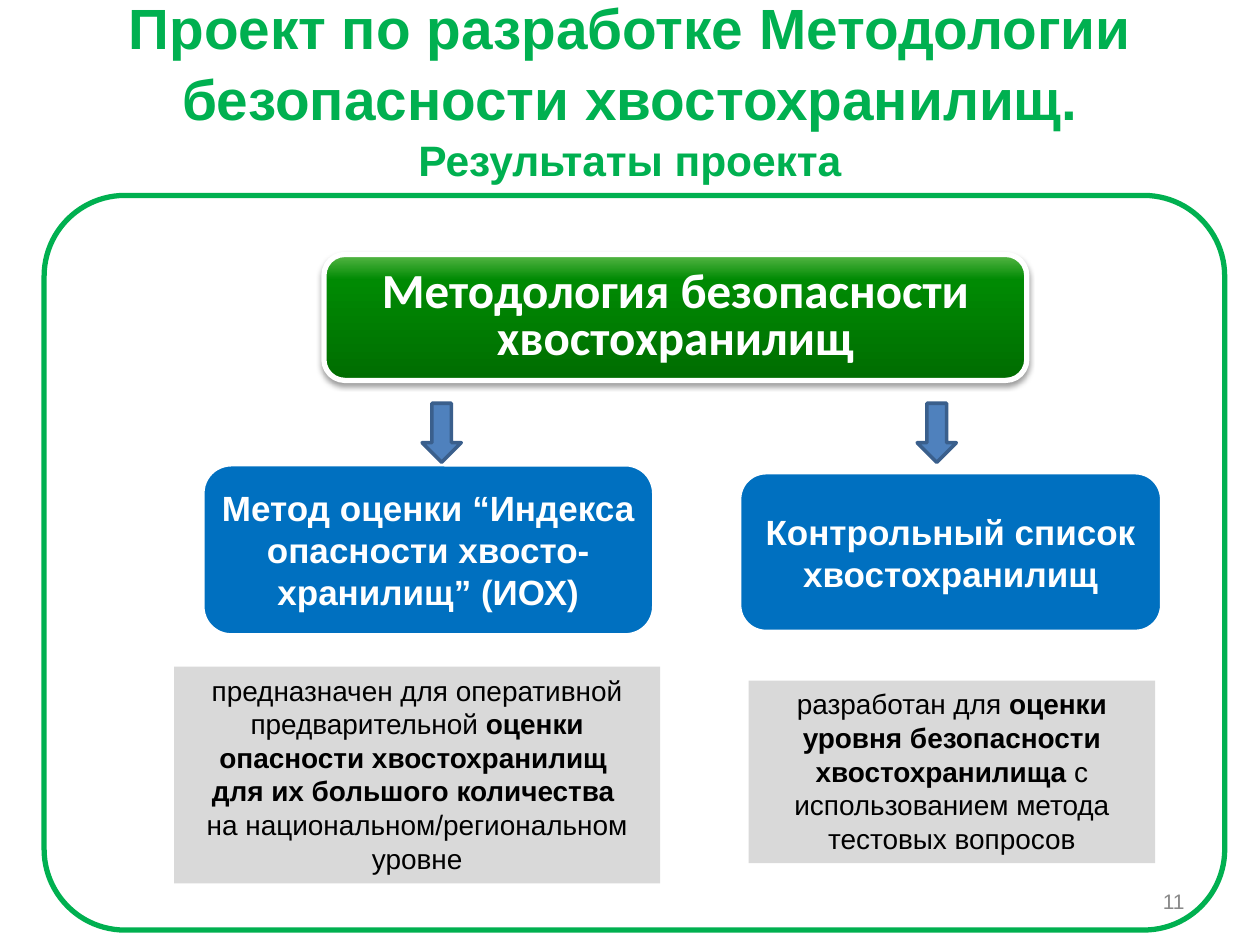
import copy

import pptx
import pptx.dml.color
import pptx.enum.shapes
import pptx.enum.text
import pptx.oxml
import pptx.oxml.ns
import pptx.util

Cm, Pt = pptx.util.Cm, pptx.util.Pt
SHAPE = pptx.enum.shapes.MSO_SHAPE
ALIGN = pptx.enum.text.PP_ALIGN
ANCHOR = pptx.enum.text.MSO_ANCHOR

GREEN, BLUE, GREY, WHITE = "00B050", "0070C0", "D9D9D9", "FFFFFF"
BANNER_STOPS = [(0, "58B747"), (0.2, "008A03"), (1, "006D01")]

# Positions are left, top, width, height in centimetres.
# Spans are (text, format) pairs; "\n" is a line break.
FRAME = (0.89, 3.94, 23.8, 14.81)
TITLE_AT = (1.27, 0.76, 22.86, 2.01)
TITLE = [
    ("Проект по разработке Методологии безопасности хвостохранилищ. ", {"size": 32.4}),
    ("Результаты проекта", {"size": 24.3}),
]
BANNER_AT = (6.53, 5.13, 14.17, 2.54)
BANNER = "Методология безопасности хвостохранилищ"
NUMBER_AT = (18.21, 17.65, 5.92, 1.02)

BRANCHES = [
    {
        "arrow_left": 8.51,
        "heading_at": (4.09, 9.37, 9.09, 3.43),
        "heading": "Метод оценки “Индекса опасности хвосто-хранилищ” (ИОХ)",
        "note_at": (3.51, 13.44, 9.8, 4.37),
        "note": [
            ("предназначен для оперативной предварительной ", {}),
            ("оценки опасности хвостохранилищ \nдля их большого количества \n", {"bold": True}),
            ("на национальном/региональном уровне", {}),
        ],
    },
    {
        "arrow_left": 18.49,
        "heading_at": (14.91, 9.53, 8.51, 3.2),
        "heading": "Контрольный список хвостохранилищ",
        "note_at": (15.09, 13.72, 8.2, 3.68),
        "note": [
            ("разработан для ", {}),
            ("оценки\nуровня безопасности хвостохранилища ", {"bold": True}),
            ("с использованием метода тестовых вопросов", {}),
        ],
    },
]


def rgb(value):
    return pptx.dml.color.RGBColor.from_string(value)


def add_box(page, kind, at, fill=None, line=None, width=2):
    box = page.shapes.add_shape(kind, *map(Cm, at))
    box.shadow.inherit = False
    if fill:
        box.fill.solid()
        box.fill.fore_color.rgb = rgb(fill)
    else:
        box.fill.background()
    if line:
        box.line.color.rgb = rgb(line)
        box.line.width = Pt(width)
    else:
        box.line.fill.background()
    return box


def write(box, text, size=16, color="000000", font="Arial", bold=False, align=ALIGN.CENTER,
          anchor=ANCHOR.MIDDLE, spacing=None, inset=(0.25, 0.13)):
    """Fill the box with one paragraph, given as a string or a list of spans."""
    frame = box.text_frame
    frame.word_wrap = True
    frame.vertical_anchor = anchor
    frame.margin_left = frame.margin_right = Cm(inset[0])
    frame.margin_top = frame.margin_bottom = Cm(inset[1])
    para = frame.paragraphs[0]
    para.alignment = align
    if spacing:
        para.line_spacing = spacing
    for words, style in [(text, {})] if isinstance(text, str) else text:
        for index, piece in enumerate(words.split("\n")):
            if index:
                para.add_line_break()
            if piece:
                span = para.add_run()
                span.text = piece
                span.font.name = font
                span.font.size = Pt(style.get("size", size))
                span.font.bold = style.get("bold", bold)
                span.font.color.rgb = rgb(color)


def add_text(page, at, text, **style):
    write(page.shapes.add_textbox(*map(Cm, at)), text, **style)


def shade(box, stops):
    """Give the box a top-to-bottom gradient."""
    box.fill.gradient()
    box.fill.gradient_angle = 270
    elements = box.fill._fill._gradFill.find(pptx.oxml.ns.qn("a:gsLst"))
    while len(elements) < len(stops):
        elements.append(copy.deepcopy(elements[-1]))
    for stop, (position, color) in zip(box.fill.gradient_stops, stops):
        stop.position = position
        stop.color.rgb = rgb(color)


def drop_shadow(box):
    effects = box._element.spPr.find(pptx.oxml.ns.qn("a:effectLst"))
    effects.append(pptx.oxml.parse_xml(
        f'<a:outerShdw {pptx.oxml.ns.nsdecls("a")} blurRad="40000" dist="20000" '
        'dir="5400000" rotWithShape="0"><a:srgbClr val="000000">'
        '<a:alpha val="38000"/></a:srgbClr></a:outerShdw>'))


def main():
    deck = pptx.Presentation()
    deck.slide_width, deck.slide_height = Cm(25.4), Cm(19.05)
    page = deck.slides.add_slide(deck.slide_layouts[6])

    frame = add_box(page, SHAPE.ROUNDED_RECTANGLE, FRAME, line=GREEN, width=3)
    frame.adjustments[0] = 0.11
    add_text(page, TITLE_AT, TITLE, color=GREEN, bold=True, spacing=1.04)
    # Spans of the title carry only their size, so both stay bold.

    banner = add_box(page, SHAPE.ROUNDED_RECTANGLE, BANNER_AT, line=WHITE, width=3)
    shade(banner, BANNER_STOPS)
    drop_shadow(banner)
    write(banner, BANNER, size=28, color=WHITE, font="Calibri", bold=True,
          spacing=0.8, inset=(0.3, 0.15))

    for branch in BRANCHES:
        heading = add_box(page, SHAPE.ROUNDED_RECTANGLE, branch["heading_at"], BLUE, WHITE)
        write(heading, branch["heading"], size=20, color=WHITE, bold=True, inset=(0.2, 0.1))
        note = add_box(page, SHAPE.RECTANGLE, branch["note_at"], GREY)
        write(note, branch["note"], anchor=ANCHOR.TOP)
        add_box(page, SHAPE.DOWN_ARROW, (branch["arrow_left"], 8.13, 0.79, 1.19),
                "4F81BD", "3A5F8C")

    add_text(page, NUMBER_AT, "11", size=12, color="898989", align=ALIGN.RIGHT)
    deck.save("out.pptx")


if __name__ == "__main__":
    main()
